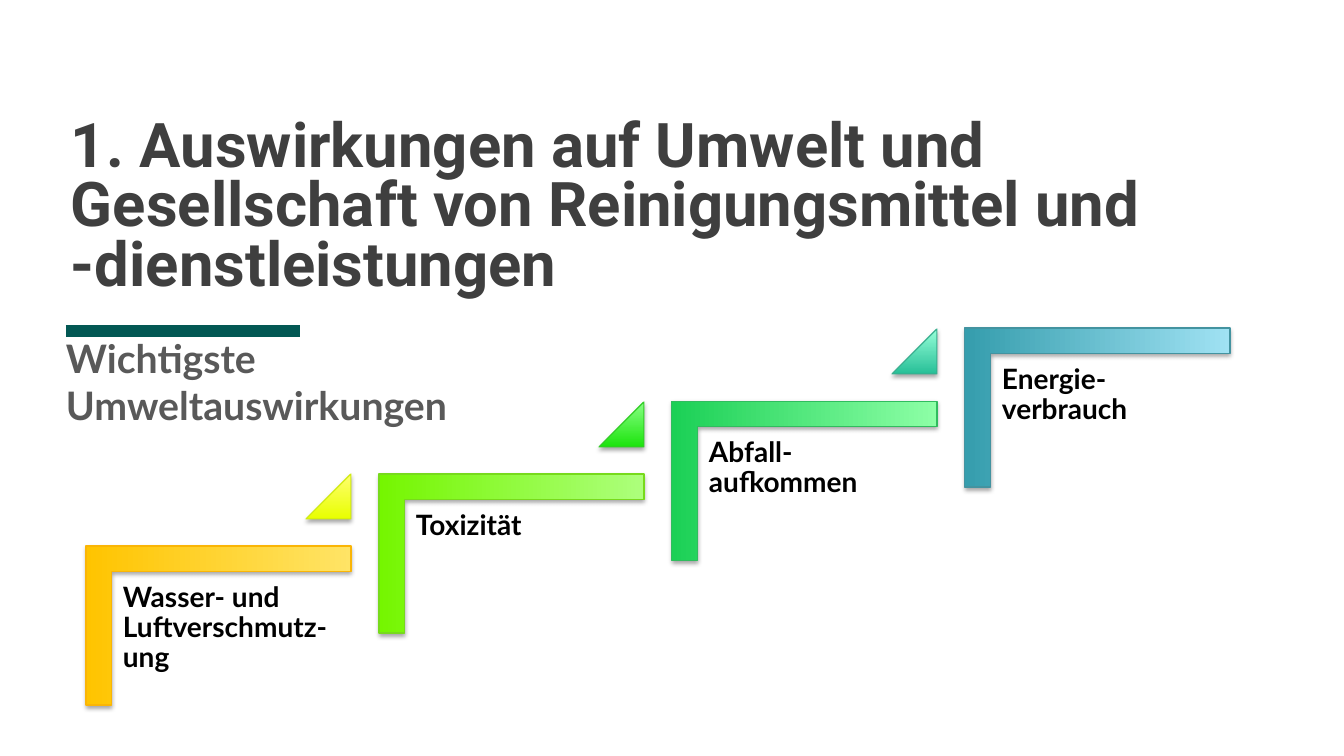
from lxml import etree
from pptx import Presentation
from pptx.dml.color import RGBColor
from pptx.enum.shapes import MSO_CONNECTOR, MSO_SHAPE
from pptx.enum.text import MSO_ANCHOR, MSO_AUTO_SIZE, PP_ALIGN
from pptx.oxml.ns import qn
from pptx.util import Emu, Pt

PX = 914400 / 100.8
CORNER, TRIANGLE = MSO_SHAPE.CORNER, MSO_SHAPE.ISOSCELES_TRIANGLE
STRAIGHT = MSO_CONNECTOR.STRAIGHT
TOP, MIDDLE, BOTTOM = MSO_ANCHOR.TOP, MSO_ANCHOR.MIDDLE, MSO_ANCHOR.BOTTOM
NO_FIT, GROW = MSO_AUTO_SIZE.NONE, MSO_AUTO_SIZE.SHAPE_TO_FIT_TEXT
LEFT = PP_ALIGN.LEFT

COLORS = {"title": "3F3F3F", "subtitle": "595959", "label": "000000",
          "rule": "035854", "shadow": "000000"}

# Each step: label, then (dark, light, outline) of its corner and of the triangle after it
STEPS = [
    ("Wasser- und Luftverschmutz-ung",
     ("FFC400", "FFE466", "FAB506"), ("E8FF00", "FFFF70", "D0EB10")),
    ("Toxizität", ("75F600", "ADFF7C", "77DA1C"), ("1CE40D", "87FF84", "32CC26")),
    ("Abfall-aufkommen", ("1BD056", "8DFFA6", "30BC5E"), ("27BF97", "97FFD9", "39AE8F")),
    ("Energie-verbrauch", ("359DAD", "A0E2F3", "4393A0"), None),
]
STEP_RUN = 293
STAIR_RISE = 218


def px(length):
    return Emu(round(length * PX))


def rgb(value):
    return RGBColor.from_string(value)


class SlidePainter:
    """Holds the text style and the current slide."""

    def __init__(self, page, body_font, title_font):
        self.page = page
        self.body_font = body_font
        self.title_font = title_font

    def fill_text(self, box, text, size, color, font, spacing, insets, **frame_format):
        frame = box.text_frame
        frame_format["word_wrap"] = True
        sides = ("margin_left", "margin_top", "margin_right", "margin_bottom")
        frame_format.update(zip(sides, map(px, insets)))
        for name, value in frame_format.items():
            setattr(frame, name, value)
        para = frame.paragraphs[0]
        para.alignment = LEFT
        para.line_spacing = spacing
        span = para.add_run()
        span.text = text
        for name, value in {"size": Pt(size), "name": font, "bold": True}.items():
            setattr(span.font, name, value)
        span.font.color.rgb = rgb(COLORS[color])

    def title(self, place, text):
        box = self.page.shapes.title
        for name, length in zip(("left", "top", "width", "height"), place):
            setattr(box, name, px(length))
        self.fill_text(box, text, 44, "title", self.title_font, 0.8, (0, 0, 0, 60),
                       vertical_anchor=BOTTOM, auto_size=NO_FIT)

    def text(self, place, text, size, color, spacing, insets, anchor, fit):
        box = self.page.shapes.add_textbox(*map(px, place))
        self.fill_text(box, text, size, color, self.body_font, spacing, insets,
                       vertical_anchor=anchor, auto_size=fit)

    def rule(self, ends, color, width):
        line = self.page.shapes.add_connector(STRAIGHT, *map(px, ends))
        line.line.color.rgb = rgb(COLORS[color])
        line.line.width = Pt(width)
        etree.SubElement(line._element.spPr, qn("a:effectLst"))

    def shape(self, kind, place, colors, adjustments, rotation=0):
        shape = self.page.shapes.add_shape(kind, *map(px, place))
        shape.rotation = rotation
        for index, value in enumerate(adjustments):
            shape.adjustments[index] = value
        dark, light, outline = colors
        shape.fill.gradient()
        shape.fill.gradient_angle = 90
        for stop, position, color in zip(shape.fill.gradient_stops, (0, 1), (dark, light)):
            stop.position = position
            stop.color.rgb = rgb(color)
        shape.line.color.rgb = rgb(outline)
        shape.line.width = Pt(0.75)
        self.shadow(shape)

    def shadow(self, shape):
        shape.shadow.inherit = False
        effects = shape._element.spPr.find(qn("a:effectLst"))
        outer = etree.SubElement(effects, qn("a:outerShdw"), blurRad="40000",
                                 dist="23000", dir="5400000", rotWithShape="0")
        tone = etree.SubElement(outer, qn("a:srgbClr"), val=COLORS["shadow"])
        etree.SubElement(tone, qn("a:alpha"), val="35000")


def main():
    deck = Presentation()
    deck.slide_width, deck.slide_height = px(1344), px(756)
    page = deck.slides.add_slide(deck.slide_layouts[5])
    painter = SlidePainter(page, "Lato", "Roboto")

    # Heading
    painter.rule((66, 331, 300, 331), "rule", 8)
    painter.title((71, 167, 1258, 191),
                  "1. Auswirkungen auf Umwelt und Gesellschaft von "
                  "Reinigungsmittel und -dienstleistungen")
    painter.text((56, 329, 517, 105), "Wichtigste Umweltauswirkungen", 28, "subtitle",
                 1.0, (10, 5, 10, 5), MIDDLE, GROW)

    # Rising staircase
    for index, (label, corner, triangle) in enumerate(STEPS):
        across = index * STEP_RUN
        rise = index * STAIR_RISE // (len(STEPS) - 1)
        painter.shape(CORNER, (139 + across, 493 - rise, 159, 265), corner,
                      (0.161, 0.161), rotation=90)
        painter.text((113 + across, 573 - rise, 239, 210), label, 20, "label",
                     0.9, (10, 10, 10, 10), TOP, NO_FIT)
        if triangle:
            painter.shape(TRIANGLE, (306 + across, 474 - rise, 45, 45), triangle, (1,))

    deck.save("out.pptx")


if __name__ == "__main__":
    main()
